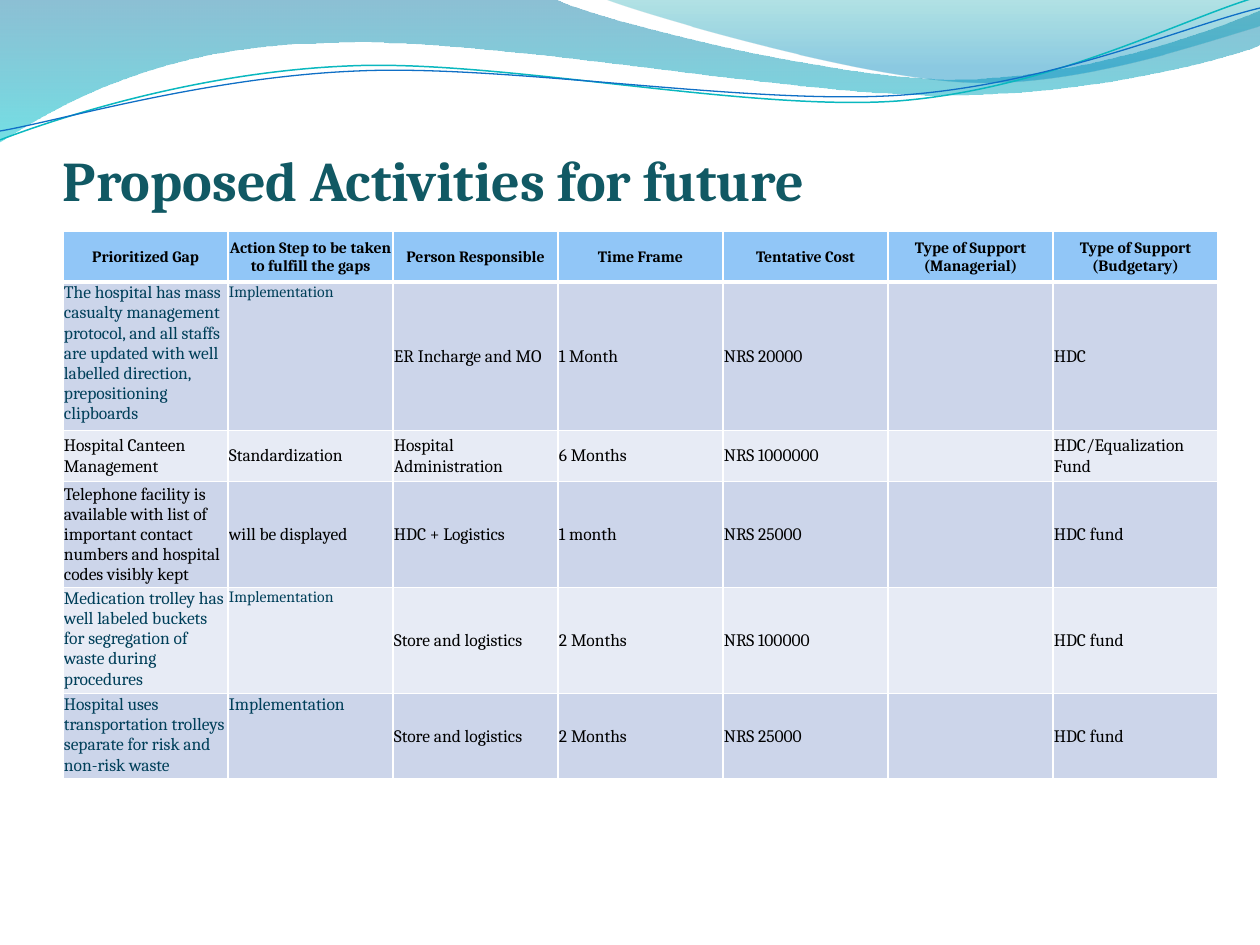
import math
import pptx
import pptx.dml.color
import pptx.enum.text
import pptx.oxml
import pptx.oxml.ns
import pptx.util
from lxml import etree

PX = 914400 / 126
FONT = "Cambria"
WHITE, BLACK, TEAL = "FFFFFF", "000000", "003F59"
MID = pptx.enum.text.MSO_ANCHOR.MIDDLE
TOP = pptx.enum.text.MSO_ANCHOR.TOP
BOTTOM = pptx.enum.text.MSO_ANCHOR.BOTTOM

# Wave outlines: one point is a straight step, three points are a curve
BAND = [[(0, 0)], [(554, -1)], [(600, 21), (837, 79), (955, 79)],
        [(1075, 79), (1207, 33), (1260, 11)], [(1261, 45)],
        [(1239, 55), (1096, 96), (940, 95)], [(784, 95), (481, 35), (324, 43)],
        [(163, 45), (58, 105), (-1, 142)], [(0, 0)]]
VEIL = [[(604, -1)], [(641, 14), (859, 78), (969, 82)],
        [(1079, 87), (1211, 40), (1260, 26)], [(1260, 0)], [(604, -1)]]
CYAN = [[(0, 140)], [(60, 117), (199, 72), (349, 66)],
        [(498, 59), (747, 112), (898, 101)], [(1050, 89), (1182, 19), (1257, -3)]]
BLUE = [[(0, 131)], [(59, 121), (207, 77), (357, 71)],
        [(508, 64), (752, 106), (903, 95)], [(1053, 84), (1185, 26), (1260, 8)]]
TILT = 2.7
HUB = (629, 73)

HEADS = ["Prioritized Gap", "Action Step to be taken to fulfill the gaps",
         "Person Responsible", "Time Frame", "Tentative Cost",
         "Type of Support (Managerial)", "Type of Support (Budgetary)"]

# Size of the action step, whether gap and step are teal, cell texts
ROWS = [
    (9, True, ["The hospital has mass casualty management protocol, and all "
               "staffs are updated with well labelled direction, "
               "prepositioning clipboards", "Implementation",
               "ER Incharge and MO", "1 Month", "NRS 20000", "", "HDC"]),
    (10, False, ["Hospital Canteen Management", "Standardization",
                 "Hospital Administration", "6 Months", "NRS 1000000", "",
                 "HDC/Equalization Fund"]),
    (10, False, ["Telephone facility is available with list of important "
                 "contact numbers and hospital codes visibly kept",
                 "will be displayed", "HDC + Logistics", "1 month",
                 "NRS 25000", "", "HDC fund"]),
    (9, True, ["Medication trolley has well labeled buckets for segregation "
               "of waste during procedures", "Implementation",
               "Store and logistics", "2 Months", "NRS 100000", "", "HDC fund"]),
    (10, True, ["Hospital uses transportation trolleys separate for risk and "
                "non-risk waste", "Implementation", "Store and logistics",
                "2 Months", "NRS 25000", "", "HDC fund"]),
]


def emu(n):
    return pptx.util.Emu(round(n * PX))


def rgb(code):
    return pptx.dml.color.RGBColor.from_string(code)


def tag(name):
    return pptx.oxml.ns.qn("a:" + name)


def turn(dot):
    """Turn a point clockwise about the hub."""
    a = math.radians(TILT)
    x, y = dot[0] - HUB[0], dot[1] - HUB[1]
    return (HUB[0] + x * math.cos(a) - y * math.sin(a),
            HUB[1] + x * math.sin(a) + y * math.cos(a))


def wave(shapes, steps):
    """Freeform through the step ends, with the curved steps bent."""
    ends = [(emu(x), emu(y)) for x, y in (step[-1] for step in steps)]
    pen = shapes.build_freeform(*ends[0], scale=1.0)
    pen.add_line_segments(ends[1:], close=ends[0] == ends[-1])
    shape = pen.convert_to_shape()
    shape.shadow.inherit = False
    left, top = (min(axis) for axis in zip(*ends))
    lines = list(shape.element.spPr.iter(tag("lnTo")))
    for line, step in zip(lines, steps[1:]):
        if len(step) == 3:
            line.tag = tag("cubicBezTo")
            for dot in list(line):
                line.remove(dot)
            for x, y in step:
                etree.SubElement(line, tag("pt"), x=str(emu(x) - left),
                                 y=str(emu(y) - top))
    return shape


def area(shapes, steps, stops):
    """Wave filled from top to bottom; a stop is place, colour, opacity."""
    shape = wave(shapes, steps)
    shape.line.fill.background()
    fill = shape.fill
    fill.gradient()
    fill.gradient_angle = 270
    for stop, (place, code, alpha) in zip(fill.gradient_stops, stops):
        stop.position = place
        stop.color.rgb = rgb(code)
    tones = shape.element.spPr.iter(tag("srgbClr"))
    for tone, (place, code, alpha) in zip(tones, stops):
        etree.SubElement(tone, tag("alpha"), val=str(alpha * 1000))


def strand(shapes, steps, code, width):
    """Thin wave, laid level and then tilted."""
    shape = wave(shapes, [[turn(dot) for dot in step] for step in steps])
    shape.rotation = 360 - TILT
    shape.fill.background()
    shape.line.color.rgb = rgb(code)
    shape.line.width = pptx.util.Pt(width)


def write(frame, text, size, code, bold=False):
    run = frame.paragraphs[0].add_run()
    run.text = text
    font = run.font
    font.name, font.size, font.bold = FONT, pptx.util.Pt(size), bold
    font.color.rgb = rgb(code)


def title(slide, text):
    box = slide.shapes.add_textbox(emu(63), emu(126), emu(1134), emu(87))
    frame = box.text_frame
    frame.word_wrap = True
    frame.vertical_anchor = BOTTOM
    frame.margin_left = frame.margin_right = frame.margin_bottom = 0
    frame.margin_top = emu(6)
    write(frame, text, 32, "115964", True)


def border(cell, top, bottom):
    props = cell._tc.get_or_add_tcPr()
    for side, width in (("L", 1), ("R", 1), ("T", top), ("B", bottom)):
        props.append(pptx.oxml.parse_xml(
            f'<a:ln{side} {pptx.oxml.ns.nsdecls("a")} w="{width * 12700}">'
            f'<a:solidFill><a:srgbClr val="{WHITE}"/></a:solidFill></a:ln{side}>'))


def paint(cell, code, anchor, top=1, bottom=1):
    border(cell, top, bottom)
    cell.fill.solid()
    cell.fill.fore_color.rgb = rgb(code)
    cell.vertical_anchor = anchor
    cell.margin_left = cell.margin_right = cell.margin_top = emu(1)
    cell.margin_bottom = 0


def grid(slide):
    frame = slide.shapes.add_table(len(ROWS) + 1, len(HEADS), emu(63), emu(231),
                                   emu(1155), emu(639))
    table = frame.table
    table.first_row = table.horz_banding = False
    for col in table.columns:
        col.width = emu(165)
    # Rows start low and grow with their text
    for row in table.rows:
        row.height = emu(51)
    frame.height = emu(639)

    # Header row
    for cell, text in zip(table.rows[0].cells, HEADS):
        paint(cell, "91C6F7", MID, bottom=3)
        write(cell.text_frame, text, 9, BLACK, True)
        cell.text_frame.paragraphs[0].alignment = pptx.enum.text.PP_ALIGN.CENTER

    # Body rows in alternating shades
    for r, (size, teal, texts) in enumerate(ROWS, 1):
        shade = "CCD5EA" if r % 2 else "E7EBF5"
        for c, text in enumerate(texts):
            cell = table.cell(r, c)
            mark = teal and c < 2
            paint(cell, shade, TOP if mark else MID, top=3 if r == 1 else 1)
            if text:
                write(cell.text_frame, text, size if c == 1 else 10,
                      TEAL if mark else BLACK)


def main():
    deck = pptx.Presentation()
    deck.slide_width, deck.slide_height = emu(1260), emu(945)
    slide = deck.slides.add_slide(deck.slide_layouts[6])

    # Wave banner
    area(slide.shapes, BAND, [(0, "0074A1", 45), (1, "00C6CF", 55)])
    area(slide.shapes, VEIL, [(0, "00A1A9", 30), (0.8, "008BBF", 45)])
    pair = slide.shapes.add_group_shape().shapes
    strand(pair, CYAN, "0AB8BF", 0.85)
    strand(pair, BLUE, "0F6FC6", 0.75)

    # Content
    title(slide, "Proposed Activities for future")
    grid(slide)
    deck.save("out.pptx")


if __name__ == "__main__":
    main()
